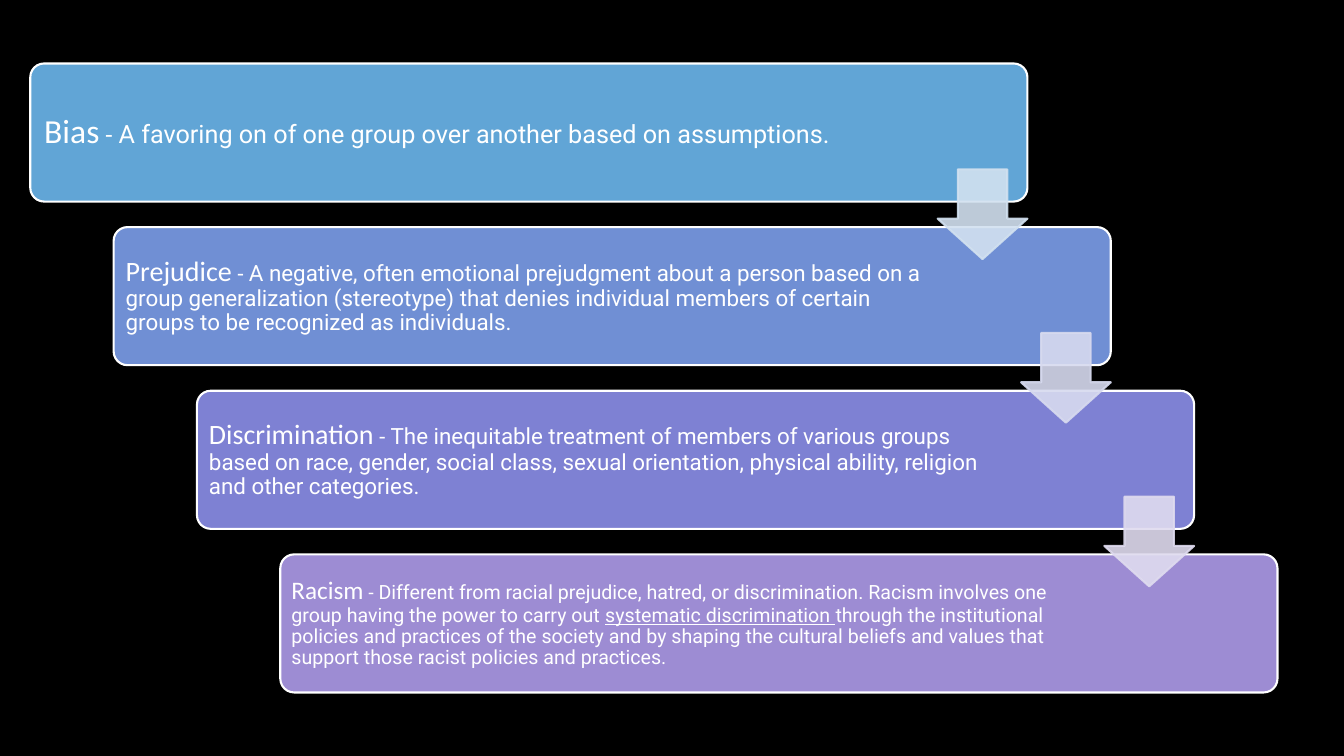
from lxml import etree
from pptx import Presentation
from pptx.dml.color import RGBColor
from pptx.enum import shapes, text
from pptx.oxml import ns
from pptx.util import Inches, Pt

COLORS = {
    "background": "000000", "white": "FFFFFF",
    "bias": "61A5D6", "prejudice": "708FD4",
    "discrimination": "7E81D3", "racism": "9D8CD3",
    "arrow 1": "D2E1F0", "arrow 2": "D7DAEF", "arrow 3": "DFDBEF",
}

# Term, term size, body size, text width, inset, definition as (text, underlined)
STEPS = [
    ("Bias", 24, 18, 8.29, 0.1, [
        ("A favoring on of one group over another based on assumptions.", False)]),
    ("Prejudice", 20, 16, 8.09, 0.08, [
        ("A negative, often emotional prejudgment about a person based on a group "
         "generalization (stereotype) that denies individual members of certain "
         "groups to be recognized as individuals.", False)]),
    ("Discrimination", 20, 16, 8.1, 0.08, [
        ("The inequitable treatment of members of various groups based on race, "
         "gender, social class, sexual orientation, physical ability, religion "
         "and other categories.", False)]),
    ("Racism", 18, 14, 8.09, 0.07, [
        ("Different from racial prejudice, hatred, or discrimination. Racism involves "
         "one group having the power to carry out ", False),
        ("systematic discrimination ", True),
        ("through the institutional policies and practices of the society and by "
         "shaping the cultural beliefs and values that support those racist "
         "policies and practices.", False)]),
]

# Staircase geometry in inches
LEFT, TOP = 0.3, 0.63
STEP_X, STEP_Y = 2.48 / 3, 4.87 / 3
BOX_W, BOX_H = 9.89, 1.37
ARROW = 0.89
PAD = 0.04


def add_block(kind, x, y, w, h, color, line_color):
    sp = s.shapes.add_shape(kind, Inches(x), Inches(y), Inches(w), Inches(h))
    sp.shadow.inherit = False
    sp.fill.solid()
    sp.fill.fore_color.rgb = RGBColor.from_string(COLORS[color])
    sp.line.color.rgb = RGBColor.from_string(COLORS[line_color])
    sp.line.width = Pt(1.5)
    return sp


def add_run(p, words, size, font, underline=False):
    r = p.add_run()
    r.text = words
    r.font.size = Pt(size)
    r.font.name = font
    r.font.color.rgb = RGBColor.from_string(COLORS["white"])
    if underline:
        r.font.underline = True


prs = Presentation()
prs.slide_width, prs.slide_height = Inches(13.33), Inches(7.5)
s = prs.slides.add_slide(prs.slide_layouts[6])
s.background.fill.solid()
s.background.fill.fore_color.rgb = RGBColor.from_string(COLORS["background"])

# Steps with their definitions
for i, (term, term_size, body_size, width, inset, definition) in enumerate(STEPS):
    x, y = LEFT + i * STEP_X, TOP + i * STEP_Y
    box = add_block(shapes.MSO_SHAPE.ROUNDED_RECTANGLE, x, y, BOX_W, BOX_H,
                    term.lower(), "white")
    box.adjustments[0] = 0.1

    label = s.shapes.add_textbox(Inches(x + PAD), Inches(y + PAD),
                                 Inches(width), Inches(BOX_H - 2 * PAD))
    tf = label.text_frame
    tf.word_wrap = True
    tf.vertical_anchor = text.MSO_ANCHOR.MIDDLE
    tf.margin_left = tf.margin_right = Inches(inset)
    tf.margin_top = tf.margin_bottom = Inches(inset)
    p = tf.paragraphs[0]
    p.line_spacing = 0.9
    add_run(p, term, term_size, "Calibri")
    add_run(p, " - ", body_size, "Calibri")
    for words, underline in definition:
        add_run(p, words, body_size, "Roboto", underline)

# Translucent arrows between the steps
for i in range(len(STEPS) - 1):
    color = f"arrow {i + 1}"
    arrow = add_block(shapes.MSO_SHAPE.DOWN_ARROW,
                      LEFT + BOX_W - ARROW + i * STEP_X, 1.68 + i * STEP_Y,
                      ARROW, ARROW, color, color)
    arrow.adjustments[0] = 0.55
    arrow.adjustments[1] = 0.45
    for clr in arrow.element.spPr.iter(ns.qn("a:srgbClr")):
        etree.SubElement(clr, ns.qn("a:alpha"), val="90000")

prs.save("out.pptx")
